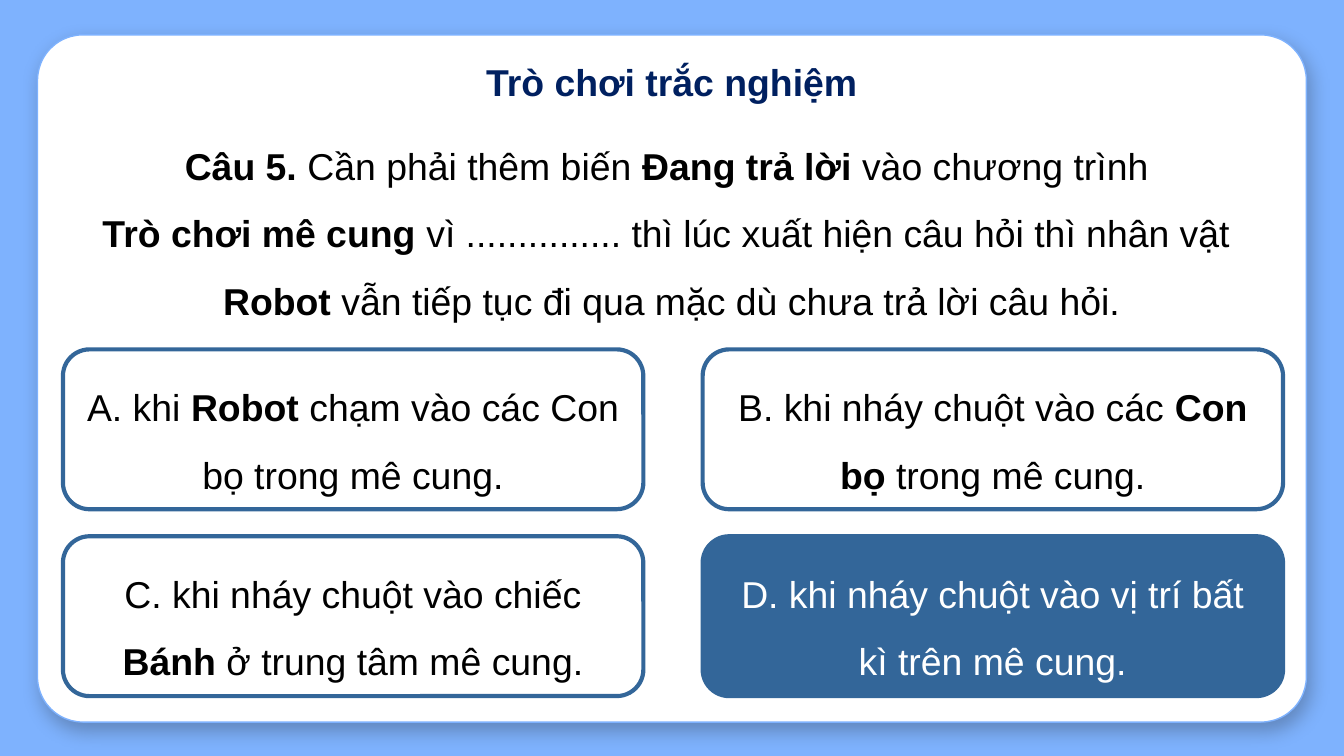
from lxml.etree import SubElement
from pptx import Presentation
from pptx.dml.color import RGBColor
from pptx.enum.shapes import MSO_SHAPE
from pptx.enum.text import MSO_ANCHOR, PP_ALIGN
from pptx.oxml.ns import qn
from pptx.util import Cm, Pt

# Content: each paragraph is a list of (text, bold) runs
TITLE = [[("Trò chơi trắc nghiệm", True)]]
QUESTION = [
    [("Câu 5. ", True), ("Cần phải thêm biến ", False),
     ("Đang trả lời", True), (" vào chương trình ", False)],
    [("Trò chơi mê cung ", True),
     ("vì ............... thì lúc xuất hiện câu hỏi thì nhân vật ", False)],
    [("Robot ", True),
     ("vẫn tiếp tục đi qua mặc dù chưa trả lời câu hỏi.", False)],
]
ANSWERS = [
    [("A. khi ", False), ("Robot", True),
     (" chạm vào các Con bọ trong mê cung.", False)],
    [("B. khi nháy chuột vào các ", False), ("Con bọ", True),
     (" trong mê cung.", False)],
    [("C. khi nháy chuột vào chiếc ", False), ("Bánh", True),
     (" ở trung tâm mê cung.", False)],
    [("D. khi nháy chuột vào vị trí bất kì trên mê cung.", False)],
]
RIGHT = 3  # index of the correct answer

# Style
FONT, SIZE = "Arial", Pt(20)
SKY = RGBColor(0x7E, 0xB2, 0xFE)
BLUE = RGBColor(0x33, 0x66, 0x99)
NAVY = RGBColor(0x00, 0x20, 0x60)
BLACK = RGBColor(0x00, 0x00, 0x00)
WHITE = RGBColor(0xFF, 0xFF, 0xFF)

# Layout in cm
WIDE, HIGH = 25.4, 14.28
LEFT, TOP = 1.19, 6.6
BOX_W, BOX_H = 10.97, 3.02
STEP_X, STEP_Y = 12.09, 3.53


def write(frame, paras, color, space=None):
    frame.word_wrap = True
    for i, runs in enumerate(paras):
        para = frame.paragraphs[0] if i == 0 else frame.add_paragraph()
        para.alignment = PP_ALIGN.CENTER
        para.line_spacing = space
        for text, bold in runs:
            run = para.add_run()
            run.text = text
            run.font.name, run.font.size = FONT, SIZE
            run.font.bold = bold
            run.font.color.rgb = color


def add_box(slide, x, y, w, h, fill, line, weight):
    box = slide.shapes.add_shape(
        MSO_SHAPE.ROUNDED_RECTANGLE, Cm(x), Cm(y), Cm(w), Cm(h))
    box.shadow.inherit = False
    box.fill.solid()
    box.fill.fore_color.rgb = fill
    box.line.color.rgb = line
    box.line.width = Pt(weight)
    return box


def add_shadow(shape):
    effects = shape._element.spPr.find(qn("a:effectLst"))
    outer = SubElement(effects, qn("a:outerShdw"), blurRad=str(Pt(10.1)),
                       dist=str(Pt(4.5)), dir=str(67 * 60000),
                       algn="bl", rotWithShape="0")
    color = SubElement(outer, qn("a:srgbClr"), val="191919")
    SubElement(color, qn("a:alpha"), val="27000")


def add_text(slide, y, h, paras, color, space=None):
    box = slide.shapes.add_textbox(0, Cm(y), Cm(WIDE), Cm(h))
    write(box.text_frame, paras, color, space)


def main():
    deck = Presentation()
    deck.slide_width, deck.slide_height = Cm(WIDE), Cm(HIGH)
    slide = deck.slides.add_slide(deck.slide_layouts[6])
    slide.background.fill.solid()
    slide.background.fill.fore_color.rgb = SKY

    # White card
    card = add_box(slide, 0.71, 0.66, 23.98, 12.98, WHITE, SKY, 0.75)
    card.adjustments[0] = 0.066
    add_shadow(card)

    # Answers in a two-column grid
    for i, runs in enumerate(ANSWERS):
        row, col = divmod(i, 2)
        fill, ink = (BLUE, WHITE) if i == RIGHT else (WHITE, BLACK)
        box = add_box(slide, LEFT + col * STEP_X, TOP + row * STEP_Y,
                      BOX_W, BOX_H, fill, BLUE, 2.25)
        box.text_frame.vertical_anchor = MSO_ANCHOR.MIDDLE
        write(box.text_frame, [runs], ink, 1.5)

    # Question and title
    add_text(slide, 2.16, 4.11, QUESTION, BLACK, 1.5)
    add_text(slide, 0.99, 1.12, TITLE, NAVY)

    deck.save("out.pptx")


if __name__ == "__main__":
    main()
